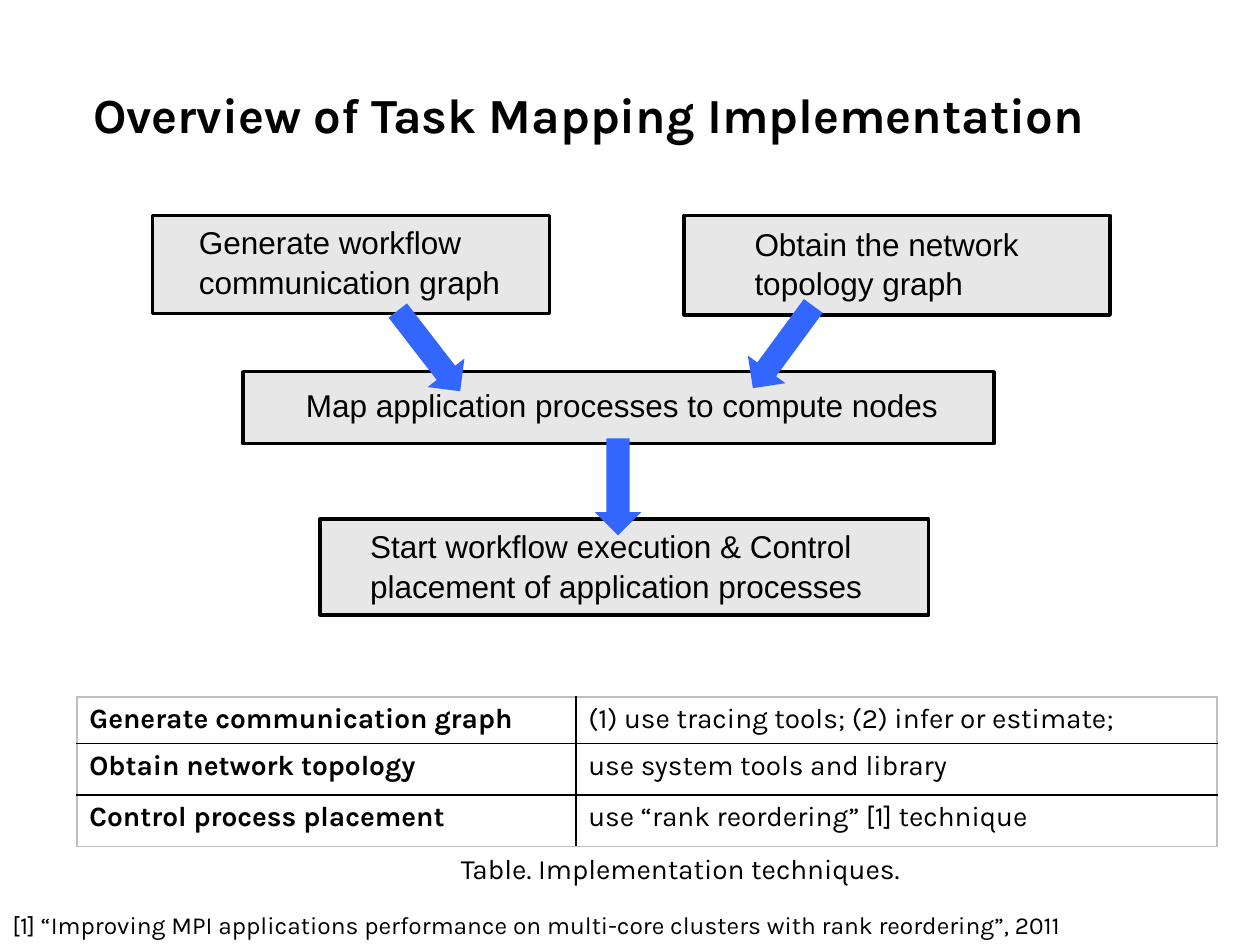
from lxml import etree
from pptx import Presentation
from pptx.dml.color import RGBColor
from pptx.enum.shapes import MSO_SHAPE
from pptx.enum.text import MSO_ANCHOR
from pptx.oxml.ns import qn
from pptx.util import Inches, Pt

BLACK = RGBColor(0x00, 0x00, 0x00)
GREY = RGBColor(0xBF, 0xBF, 0xBF)
PANEL = RGBColor(0xE7, 0xE7, 0xE7)
BLUE = RGBColor(0x33, 0x66, 0xFF)

TITLE = {"name": "Karla", "size": Pt(28), "bold": True}
STEP = {"name": "Arial", "size": Pt(18)}
BODY = {"name": "Karla", "size": Pt(16), "bold": False}
LABEL = {**BODY, "bold": True}
REFERENCE = {"name": "Karla", "size": Pt(14)}

STEPS = [
    ("Generate workflow communication graph",
     (1.21, 1.71, 3.15, 0.78), (1.48, 1.71, 2.73, 0.76)),
    ("Obtain the network topology graph",
     (5.43, 1.71, 3.38, 0.79), (5.89, 1.72, 2.6, 0.76)),
    ("Map application processes to compute nodes",
     (1.93, 2.95, 5.96, 0.57), (2.33, 3, 5.77, 0.43)),
    ("Start workflow execution & Control placement of application processes",
     (2.54, 4.12, 4.83, 0.76), (2.84, 4.12, 4.43, 0.76)),
]
ARROWS = [
    ((3.22, 2.38, 0.37, 0.81), 322.3),
    ((4.72, 3.48, 0.37, 0.77), 0),
    ((6.03, 2.35, 0.37, 0.81), 36.3),
]
TECHNIQUES = [
    ("Generate communication graph", "(1) use tracing tools; (2) infer or estimate;"),
    ("Obtain network topology", "use system tools and library"),
    ("Control process placement", "use “rank reordering” [1] technique"),
]
COLUMN_WIDTHS = [3.96, 5.09]
ROW_HEIGHTS = [0.37, 0.41, 0.41]


def to_inches(box):
    return [Inches(length) for length in box]


def write(frame, text, style):
    para = frame.paragraphs[0]
    span = para.add_run()
    span.text = text
    for name, value in style.items():
        setattr(span.font, name, value)
    span.font.color.rgb = BLACK
    return para


def add_text(page, box, text, style, anchor=MSO_ANCHOR.TOP):
    frame = page.shapes.add_textbox(*to_inches(box)).text_frame
    frame.word_wrap = True
    frame.vertical_anchor = anchor
    return write(frame, text, style)


def add_filled(page, kind, box, color):
    shape = page.shapes.add_shape(kind, *to_inches(box))
    shape.shadow.inherit = False
    shape.fill.solid()
    shape.fill.fore_color.rgb = color
    return shape


def add_step(page, text, panel_box, text_box):
    panel = add_filled(page, MSO_SHAPE.RECTANGLE, panel_box, PANEL)
    panel.line.color.rgb = BLACK
    panel.line.width = Pt(2)
    add_text(page, text_box, text, STEP).line_spacing = 1.05


def add_arrow(page, box, angle):
    arrow = add_filled(page, MSO_SHAPE.DOWN_ARROW, box, BLUE)
    arrow.line.fill.background()
    arrow.rotation = angle


def add_flow(page):
    for step in STEPS:
        add_step(page, *step)
    for arrow in ARROWS:
        add_arrow(page, *arrow)


def set_borders(cell, colors):
    properties = cell._tc.get_or_add_tcPr()
    for position, (side, color) in enumerate(colors.items()):
        border = etree.Element(qn(f"a:{side}"), w=str(Pt(1)))
        fill = etree.SubElement(border, qn("a:solidFill"))
        etree.SubElement(fill, qn("a:srgbClr"), val=str(color))
        properties.insert(position, border)


def add_techniques(page, box):
    rows, columns = len(ROW_HEIGHTS), len(COLUMN_WIDTHS)
    table = page.shapes.add_table(rows, columns, *to_inches(box)).table
    table.first_row = table.horz_banding = False
    for column, width in zip(table.columns, COLUMN_WIDTHS):
        column.width = Inches(width)
    for row, height in zip(table.rows, ROW_HEIGHTS):
        row.height = Inches(height)
    for r, texts in enumerate(TECHNIQUES):
        for c, (text, style) in enumerate(zip(texts, (LABEL, BODY))):
            cell = table.cell(r, c)
            write(cell.text_frame, text, style)
            cell.fill.background()
            set_borders(cell, {
                "lnL": BLACK if c else GREY,
                "lnR": BLACK if c < columns - 1 else GREY,
                "lnT": BLACK if r else GREY,
                "lnB": BLACK if r < rows - 1 else GREY,
            })


def main():
    deck = Presentation()
    deck.slide_width, deck.slide_height = Inches(10), Inches(7.5)
    page = deck.slides.add_slide(deck.slide_layouts[6])
    add_text(page, (0.64, 0.39, 9, 1.03),
             "Overview of Task Mapping Implementation", TITLE, MSO_ANCHOR.MIDDLE)
    add_flow(page)
    add_text(page, (0, 7.17, 9.34, 0.34),
             "[1] “Improving MPI applications performance on multi-core clusters "
             "with rank reordering”, 2011", REFERENCE)
    add_techniques(page, (0.61, 5.53, sum(COLUMN_WIDTHS), sum(ROW_HEIGHTS)))
    add_text(page, (3.56, 6.71, 3.98, 0.37), "Table. Implementation techniques.", BODY)
    deck.save("out.pptx")


if __name__ == "__main__":
    main()
